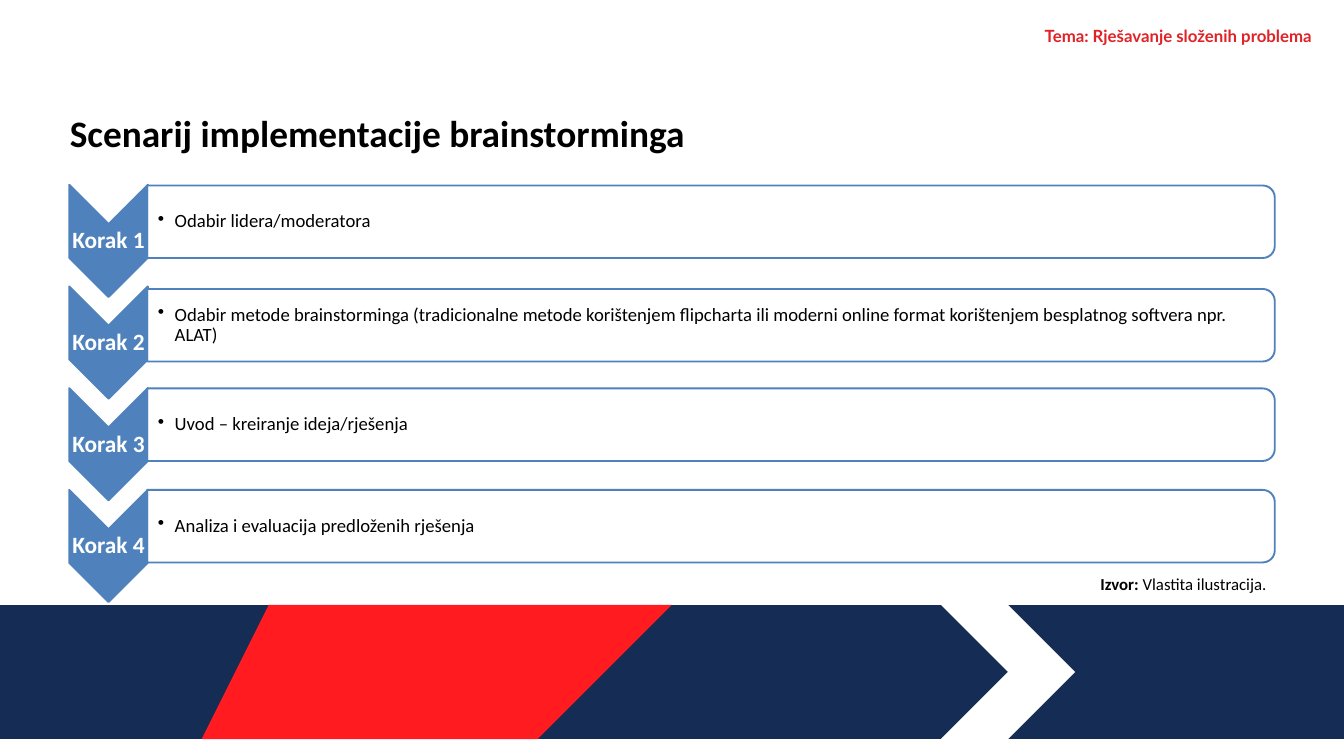
"""Builds the slide with the four-step brainstorming scenario."""
from dataclasses import dataclass

from lxml.etree import SubElement
from pptx import Presentation
from pptx.dml.color import RGBColor
from pptx.enum.shapes import MSO_SHAPE as Preset
from pptx.enum.text import MSO_ANCHOR as Anchor
from pptx.enum.text import MSO_AUTO_SIZE as AutoSize
from pptx.enum.text import PP_ALIGN as Align
from pptx.oxml.ns import qn
from pptx.shapes.autoshape import Shape
from pptx.shapes.shapetree import SlideShapes
from pptx.text.text import TextFrame, _Paragraph as Paragraph
from pptx.util import Inches, Pt

NAVY = RGBColor(0x15, 0x2D, 0x54)
RED = RGBColor(0xFF, 0x1B, 0x20)
TOPIC_RED = RGBColor(0xE1, 0x22, 0x27)
BLUE = RGBColor(0x4F, 0x81, 0xBD)
WHITE = RGBColor(0xFF, 0xFF, 0xFF)
BLACK = RGBColor(0, 0, 0)

FIRST_CHEVRON_TOP = 3.0
STEP_PITCH = 1.513
CHEVRON_LEFT, CHEVRON_LENGTH, CHEVRON_WIDTH = 0.78, 1.67, 1.17
PANEL_LEFT, PANEL_LENGTH, PANEL_HEIGHT = 2.19, 16.78, 1.08
CAPTION_HEIGHT = 0.98


@dataclass(frozen=True)
class Band:
    points: tuple[tuple[float, float], ...]
    color: RGBColor


@dataclass(frozen=True)
class Step:
    label: str
    action: str
    caption_top: float


BANDS = (
    Band(((0, 9.31), (20, 9.31), (20, 11.25), (0, 11.25)), NAVY),
    Band(((13.8, 9.28), (15.15, 9.28), (16.23, 10.26), (15.15, 11.24),
          (13.8, 11.24), (14.88, 10.26)), WHITE),
    Band(((4.47, 9.31), (10, 9.31), (8.06, 11.25), (2.54, 11.25)), RED),
)

STEPS = (
    Step("Korak 1", "Odabir lidera/moderatora", 2.81),
    Step("Korak 2", "Odabir metode brainstorminga (tradicionalne metode "
         "korištenjem flipcharta ili moderni online format korištenjem "
         "besplatnog softvera npr. ALAT)", 4.35),
    Step("Korak 3", "Uvod – kreiranje ideja/rješenja", 5.83),
    Step("Korak 4", "Analiza i evaluacija predloženih rješenja", 7.34),
)


def add_run(paragraph: Paragraph, text: str, size: float, color: RGBColor,
            bold: bool = False, font: str = "Calibri") -> None:
    run = paragraph.add_run()
    run.text = text
    run.font.size = Pt(size)
    run.font.name = font
    run.font.bold = bold
    run.font.color.rgb = color


def set_margins(frame: TextFrame, left: float, top: float,
                right: float, bottom: float) -> None:
    frame.margin_left, frame.margin_top = Inches(left), Inches(top)
    frame.margin_right, frame.margin_bottom = Inches(right), Inches(bottom)


def add_frame(shapes: SlideShapes, left: float, top: float, width: float,
              height: float, wrap: bool = True) -> TextFrame:
    frame = shapes.add_textbox(Inches(left), Inches(top),
                               Inches(width), Inches(height)).text_frame
    frame.word_wrap = wrap
    return frame


def add_band(shapes: SlideShapes, band: Band) -> None:
    start, *others = band.points
    builder = shapes.build_freeform(*start, scale=Inches(1))
    builder.add_line_segments(others, close=True)
    outline = builder.convert_to_shape()
    outline.shadow.inherit = False
    outline.fill.solid()
    outline.fill.fore_color.rgb = band.color
    outline.line.fill.background()


def add_turned(shapes: SlideShapes, preset: Preset, center_x: float,
               center_y: float, length: float, breadth: float,
               color: RGBColor) -> Shape:
    turned = shapes.add_shape(
        preset, Inches(center_x - length / 2), Inches(center_y - breadth / 2),
        Inches(length), Inches(breadth))
    turned.rotation = 90
    turned.shadow.inherit = False
    turned.fill.solid()
    turned.fill.fore_color.rgb = color
    turned.line.color.rgb = BLUE
    turned.line.width = Pt(2)
    return turned


def set_bullet(paragraph: Paragraph, indent: float) -> None:
    properties = paragraph._p.get_or_add_pPr()
    properties.set("marL", str(Inches(indent)))
    properties.set("indent", str(-Inches(indent)))
    SubElement(properties, qn("a:buChar")).set("char", "•")


def add_step(shapes: SlideShapes, step: Step, chevron_top: float) -> None:
    add_turned(shapes, Preset.CHEVRON, CHEVRON_LEFT + CHEVRON_LENGTH / 2,
               chevron_top + CHEVRON_WIDTH / 2, CHEVRON_LENGTH,
               CHEVRON_WIDTH, BLUE)
    label = add_frame(shapes, 1.03, chevron_top + 0.34, CHEVRON_WIDTH, 0.5)
    set_margins(label, 0.02, 0.02, 0.02, 0.02)
    label.vertical_anchor = Anchor.MIDDLE
    name = label.paragraphs[0]
    name.alignment = Align.CENTER
    name.line_spacing = 0.9
    add_run(name, step.label, 25, WHITE, bold=True)

    panel = add_turned(shapes, Preset.ROUND_2_SAME_RECTANGLE,
                       PANEL_LEFT + PANEL_LENGTH / 2,
                       step.caption_top + CAPTION_HEIGHT / 2,
                       PANEL_HEIGHT, PANEL_LENGTH, WHITE)
    white = panel.fill._xPr.find(qn("a:solidFill"))[0]
    SubElement(white, qn("a:alpha")).set("val", "90000")
    caption = add_frame(shapes, PANEL_LEFT, step.caption_top, 16.73,
                        CAPTION_HEIGHT)
    set_margins(caption, 0.16, 0.01, 0.01, 0.01)
    caption.vertical_anchor = Anchor.MIDDLE
    action = caption.paragraphs[0]
    action.line_spacing = 0.9
    set_bullet(action, 0.25)
    add_run(action, step.action, 20, BLACK)


def add_heading(title: Shape) -> None:
    title.left, title.top = Inches(1.03), Inches(1.62)
    title.width, title.height = Inches(18.39), Inches(1.12)
    frame = title.text_frame
    frame.word_wrap = True
    frame.auto_size = AutoSize.SHAPE_TO_FIT_TEXT
    frame.vertical_anchor = Anchor.TOP
    set_margins(frame, 0.01, 0.02, 0, 0)
    heading = frame.paragraphs[0]
    heading.alignment = Align.LEFT
    heading.space_before = Pt(1.1)
    add_run(heading, "Scenarij implementacije brainstorminga", 40, BLACK,
            bold=True)


def main() -> None:
    deck = Presentation()
    deck.slide_width, deck.slide_height = Inches(20), Inches(11.25)
    slide = deck.slides.add_slide(deck.slide_layouts[5])
    shapes = slide.shapes

    for band in BANDS:
        add_band(shapes, band)
    for index, step in enumerate(STEPS):
        add_step(shapes, step, FIRST_CHEVRON_TOP + index * STEP_PITCH)
    add_heading(shapes.title)

    source = add_frame(shapes, 16.26, 8.49, 2.7, 0.4, wrap=False)
    source.auto_size = AutoSize.SHAPE_TO_FIT_TEXT
    credit = source.paragraphs[0]
    credit.alignment = Align.CENTER
    add_run(credit, "Izvor: ", 18, BLACK, bold=True)
    add_run(credit, "Vlastita ilustracija.", 18, BLACK)

    header = add_frame(shapes, 9, 0.37, 10.52, 0.32)
    header.auto_size = AutoSize.SHAPE_TO_FIT_TEXT
    set_margins(header, 0, 0.01, 0, 0)
    topic = header.paragraphs[0]
    topic.alignment = Align.RIGHT
    add_run(topic, "Tema: Rješavanje složenih problema", 18, TOPIC_RED,
            bold=True, font="Lato")

    deck.save("out.pptx")


if __name__ == "__main__":
    main()
